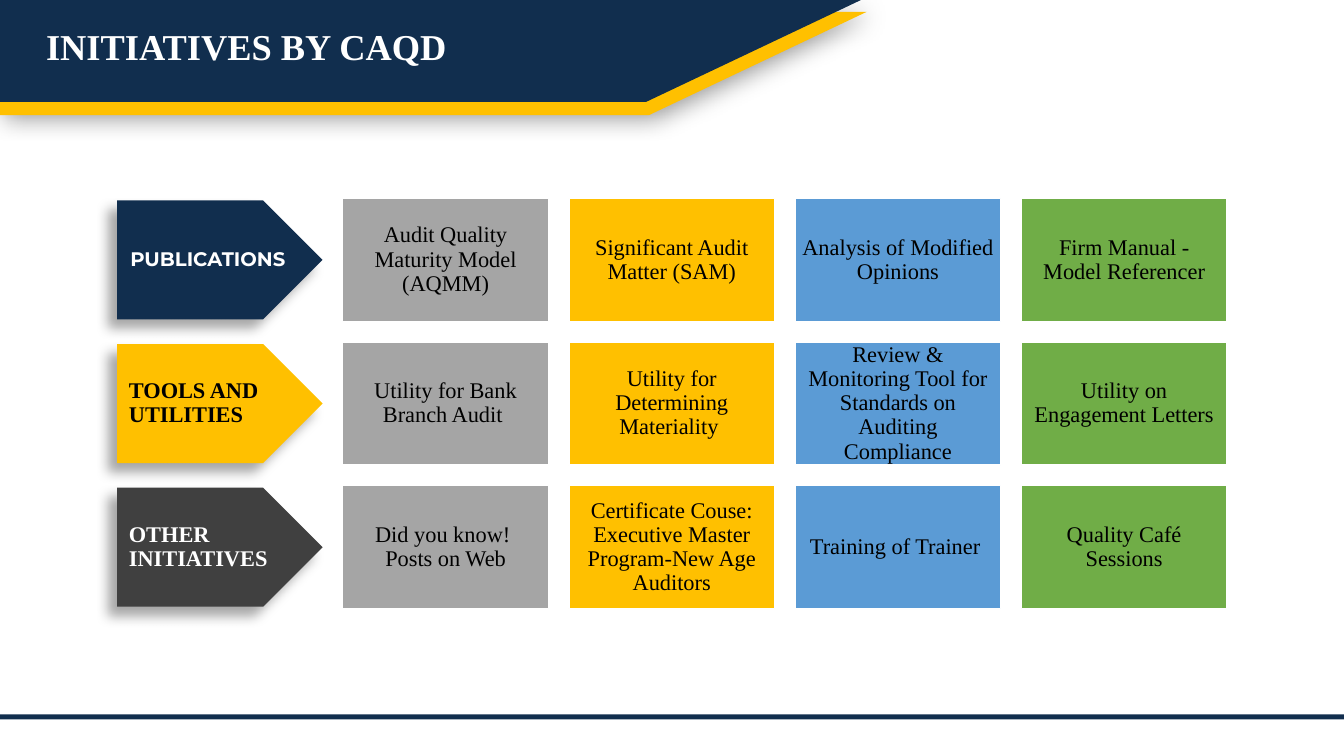
from dataclasses import dataclass
from typing import Optional

import lxml.etree
import pptx
import pptx.dml.color
import pptx.enum.shapes
import pptx.enum.text
import pptx.oxml.ns
import pptx.util

Cm = pptx.util.Cm
Pt = pptx.util.Pt
RGB = pptx.dml.color.RGBColor.from_string
Align = pptx.enum.text.PP_ALIGN
Anchor = pptx.enum.text.MSO_ANCHOR
Kind = pptx.enum.shapes.MSO_SHAPE
qn = pptx.oxml.ns.qn


@dataclass(frozen=True)
class Theme:
    navy: str = "112E4E"
    gold: str = "FFC000"
    dark: str = "404040"
    gray: str = "A5A5A5"
    blue: str = "5B9BD5"
    green: str = "70AD47"
    white: str = "FFFFFF"
    black: str = "000000"
    serif: str = "Times New Roman"
    sans: str = "Montserrat"
    head: int = 26
    body: int = 16
    small: int = 14


@dataclass(frozen=True)
class Box:
    left: float
    top: float
    width: float
    height: float


@dataclass(frozen=True)
class Style:
    color: str
    font: str
    size: int
    bold: bool = False
    align: Align = Align.CENTER
    inset: float = 0.18
    lead: float = 0.18


@dataclass(frozen=True)
class Shade:
    alpha: int
    blur: int
    dist: int
    angle: int


@dataclass(frozen=True)
class Row:
    label: str
    fill: str
    style: Style
    items: tuple[str, ...]


T = Theme()
WIDTH, HEIGHT = 33.87, 19.05
GRID = Box(8.64, 5, 5.18, 3.1)
STEP_X, STEP_Y = 5.7, 3.62
ARROW = Box(2.95, 5.05, 5.18, 3)
FILLS = (T.gray, T.gold, T.blue, T.green)
CELL = Style(T.black, T.serif, T.body)
BANDS = (
    (T.gold, ((0, 0.3), (21.84, 0.3), (16.36, 2.9), (0, 2.9)), Shade(40, 17, 3, 45)),
    (T.navy, ((0, 0), (21.7, 0), (16.28, 2.57), (0, 2.57)), None),
)
ROWS = (
    Row("PUBLICATIONS", T.navy,
        Style(T.white, T.sans, T.small, True, inset=0.15, lead=0.3),
        ("Audit Quality Maturity Model (AQMM)", "Significant Audit Matter (SAM)",
         "Analysis of Modified Opinions", "Firm Manual - Model Referencer")),
    Row("TOOLS AND UTILITIES", T.gold,
        Style(T.black, T.serif, T.body, True, Align.LEFT, lead=0.3),
        ("Utility for Bank Branch Audit ", "Utility for Determining Materiality ",
         "Review & Monitoring Tool for Standards on Auditing Compliance",
         "Utility on Engagement Letters")),
    Row("OTHER INITIATIVES", T.dark,
        Style(T.white, T.serif, T.body, True, Align.LEFT, lead=0.3),
        ("Did you know! \nPosts on Web",
         "Certificate Couse: Executive Master Program-New Age Auditors",
         "Training of Trainer ", "Quality Café Sessions")),
)


def paint(shape, fill: str, line: Optional[str] = None, shade: Optional[Shade] = None) -> None:
    shape.fill.solid()
    shape.fill.fore_color.rgb = RGB(fill)
    if line:
        shape.line.color.rgb = RGB(line)
        shape.line.width = Pt(1)
    else:
        shape.line.fill.background()
    shape.shadow.inherit = False
    if shade:
        effects = shape.element.spPr.find(qn("a:effectLst"))
        outer = lxml.etree.SubElement(
            effects, qn("a:outerShdw"), blurRad=str(Pt(shade.blur)),
            dist=str(Pt(shade.dist)), dir=str(shade.angle * 60000),
            algn="ctr", rotWithShape="0")
        color = lxml.etree.SubElement(outer, qn("a:srgbClr"), val=T.black)
        lxml.etree.SubElement(color, qn("a:alpha"), val=str(shade.alpha * 1000))


def write(shape, text: str, style: Style, anchor: Anchor = Anchor.MIDDLE,
          spacing: float = 0.9) -> None:
    frame = shape.text_frame
    frame.word_wrap = True
    frame.vertical_anchor = anchor
    frame.margin_left = Cm(style.lead)
    frame.margin_right = frame.margin_top = frame.margin_bottom = Cm(style.inset)
    para = frame.paragraphs[0]
    para.text = text
    para.alignment = style.align
    para.line_spacing = spacing
    para.font.name = style.font
    para.font.size = Pt(style.size)
    para.font.bold = style.bold
    para.font.color.rgb = RGB(style.color)


def place(shape, box: Box) -> None:
    shape.left, shape.top = Cm(box.left), Cm(box.top)
    shape.width, shape.height = Cm(box.width), Cm(box.height)


def add_shape(slide, kind: Kind, box: Box, fill: str, line: Optional[str] = None,
              shade: Optional[Shade] = None):
    shape = slide.shapes.add_shape(kind, 0, 0, 0, 0)
    place(shape, box)
    paint(shape, fill, line, shade)
    return shape


def add_head(slide) -> None:
    for fill, points, shade in BANDS:
        start, *rest = [(Cm(x), Cm(y)) for x, y in points]
        path = slide.shapes.build_freeform(*start)
        path.add_line_segments(rest)
        paint(path.convert_to_shape(), fill, shade=shade)
    title = slide.shapes.title
    place(title, Box(0.91, 0.48, 20, 1.37))
    write(title, "INITIATIVES BY CAQD",
          Style(T.white, T.serif, T.head, True, Align.LEFT, 0.13, 0.25), Anchor.TOP, 1.0)
    title.text_frame.auto_size = pptx.enum.text.MSO_AUTO_SIZE.SHAPE_TO_FIT_TEXT
    slide.shapes.element.append(title.element)  # bring in front of the bands


def add_row(slide, row: Row, shift: float) -> None:
    box = Box(ARROW.left, ARROW.top + shift, ARROW.width, ARROW.height)
    arrow = add_shape(slide, Kind.PENTAGON, box, row.fill, shade=Shade(35, 9, 9, 135))
    write(arrow, row.label, row.style)
    for col, (item, fill) in enumerate(zip(row.items, FILLS)):
        box = Box(GRID.left + col * STEP_X, GRID.top + shift, GRID.width, GRID.height)
        write(add_shape(slide, Kind.RECTANGLE, box, fill, T.white), item, CELL)


def main() -> None:
    deck = pptx.Presentation()
    deck.slide_width, deck.slide_height = Cm(WIDTH), Cm(HEIGHT)
    slide = deck.slides.add_slide(deck.slide_layouts.get_by_name("Title Only"))
    add_head(slide)
    add_shape(slide, Kind.RECTANGLE, Box(0, 18, WIDTH, 0.13), T.navy)
    for index, row in enumerate(ROWS):
        add_row(slide, row, index * STEP_Y)
    deck.save("out.pptx")


if __name__ == "__main__":
    main()
